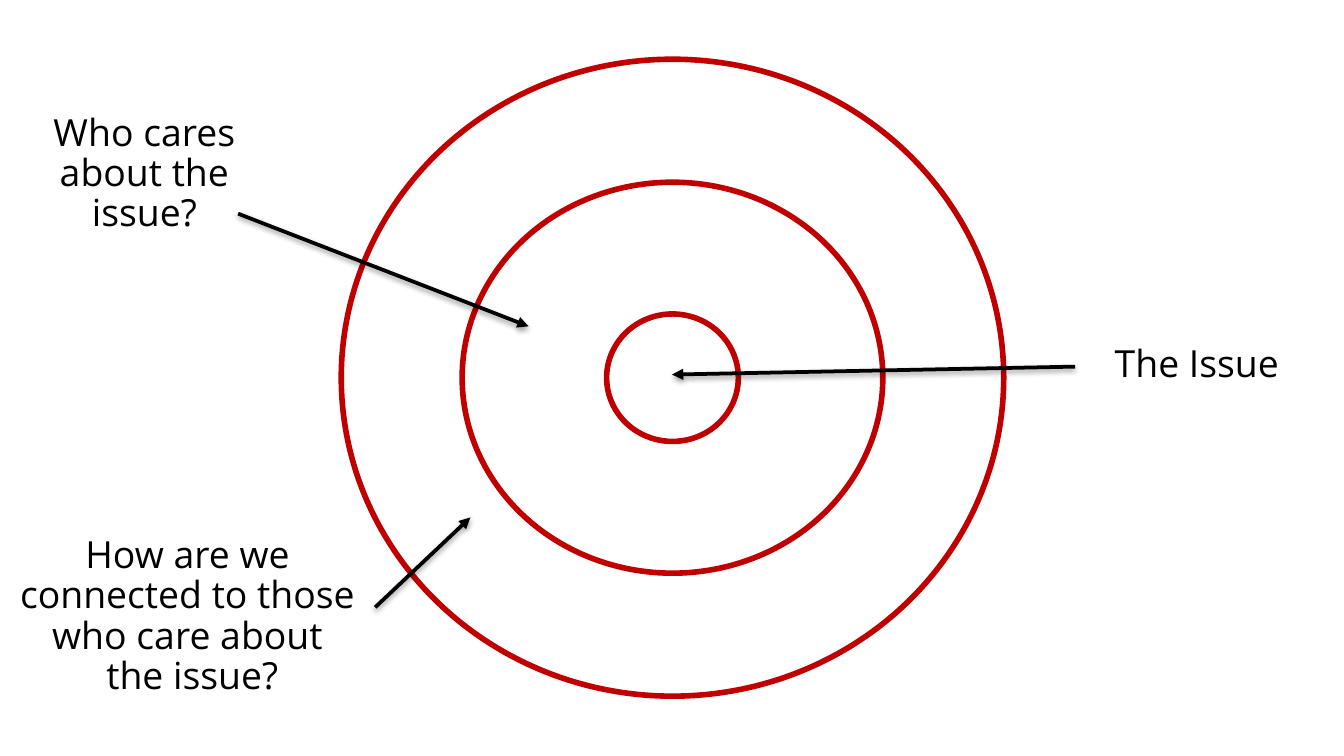
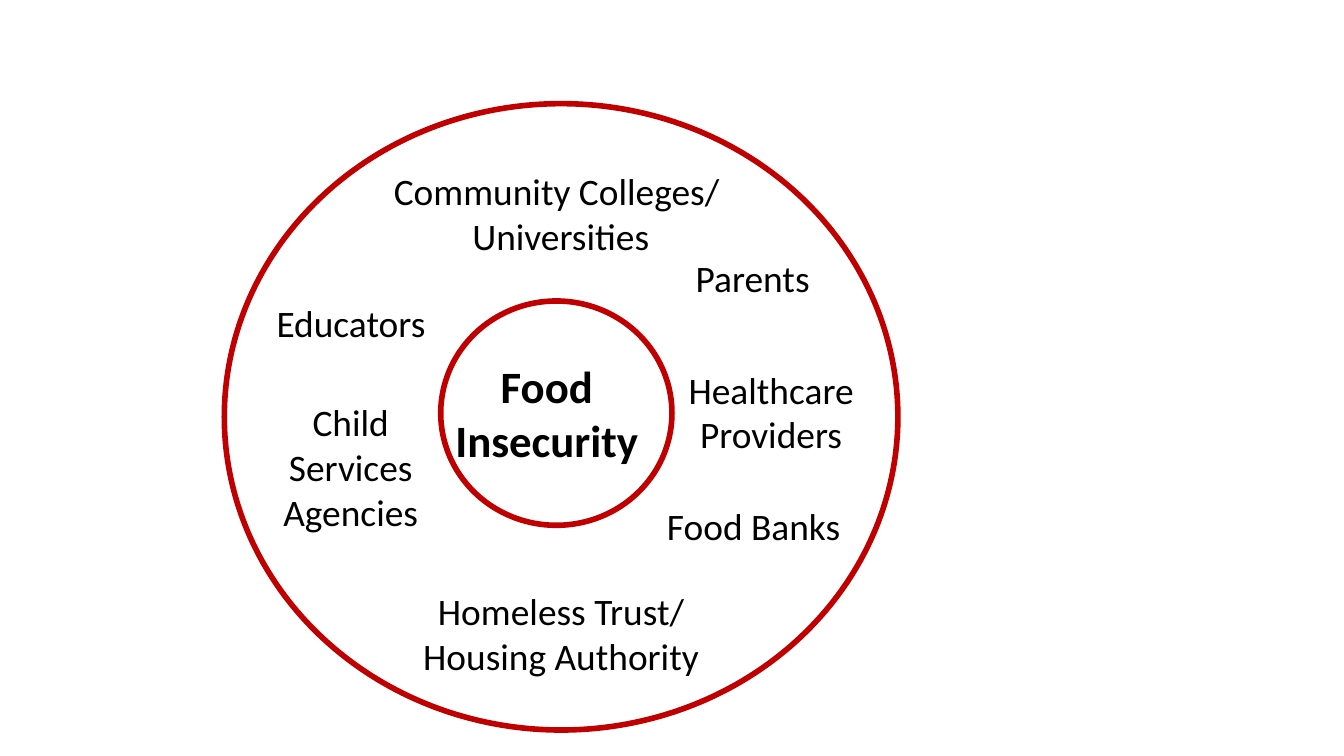
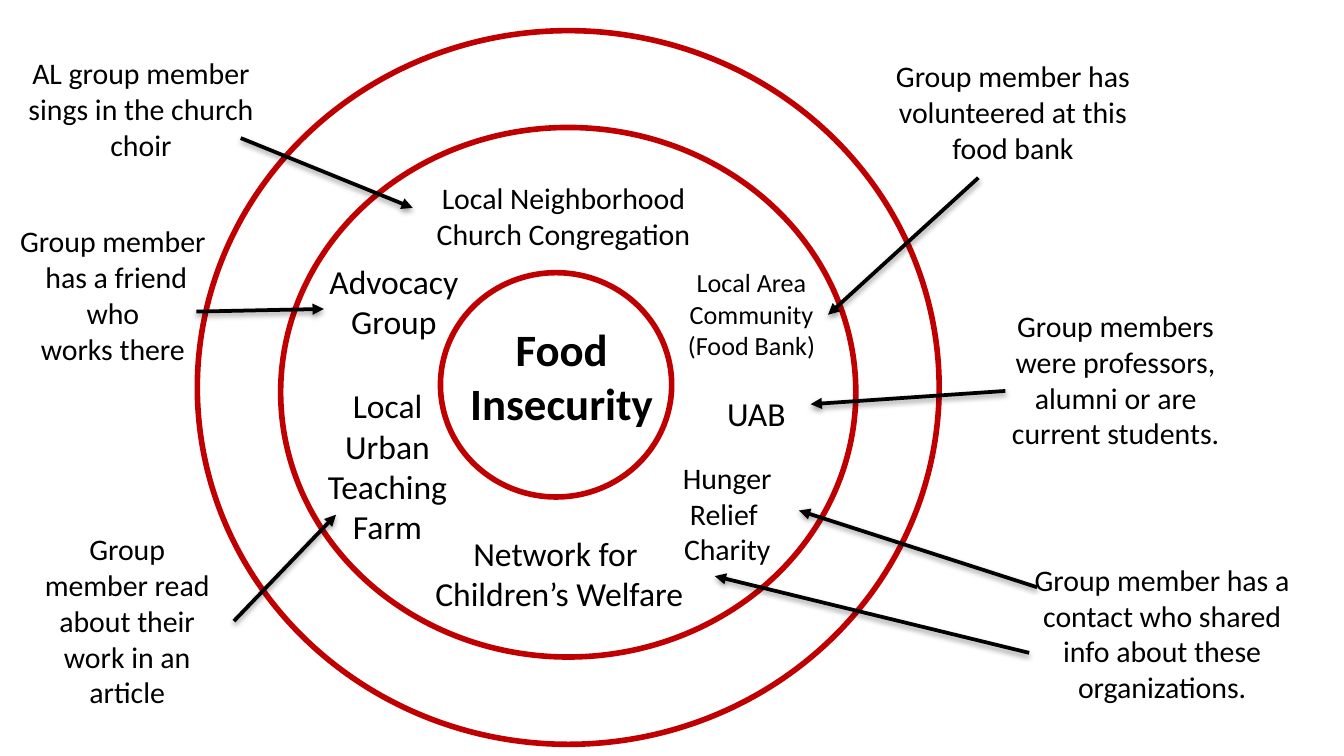
from collections import namedtuple

from lxml import etree
from pptx import Presentation
from pptx.dml.color import RGBColor
from pptx.enum import shapes, text
from pptx.oxml import ns
from pptx.util import Cm, Pt

RED = RGBColor(0xC0, 0x00, 0x00)
BLACK = RGBColor(0x00, 0x00, 0x00)
BODY_FONT = "Calibri"
QUESTION_FONT = "Open Sans"

Box = namedtuple("Box", "left top width height")
SHADOW = (
    f'<a:effectLst {ns.nsdecls("a")}>'
    '<a:outerShdw blurRad="39370" dist="20320" dir="5400000" rotWithShape="0">'
    '<a:srgbClr val="000000"><a:alpha val="38000"/></a:srgbClr>'
    '</a:outerShdw></a:effectLst>'
)
INNER_RING = (4.37, 4.24)
HUB_SIZE = (4.01, 2.31)
HUB_TEXT = "Food\vInsecurity"


def add_words(slide, box, words, size=20, font=BODY_FONT, bold=False,
              wrap=True, grow=True, spacing=None):
    frame = slide.shapes.add_textbox(*map(Cm, box)).text_frame
    frame.word_wrap = wrap
    frame.auto_size = (text.MSO_AUTO_SIZE.SHAPE_TO_FIT_TEXT if grow
                       else text.MSO_AUTO_SIZE.NONE)
    for index, line in enumerate(words.split("\n")):
        paragraph = frame.add_paragraph() if index else frame.paragraphs[0]
        paragraph.text = line
        paragraph.alignment = text.PP_ALIGN.CENTER
        if spacing:
            paragraph.line_spacing = spacing
        for run in paragraph.runs:
            run.font.name = font
            run.font.size = Pt(size)
            run.font.bold = bold
            run.font.color.rgb = BLACK


def add_arrow(slide, start_x, start_y, run_x, run_y):
    arrow = slide.shapes.add_connector(
        shapes.MSO_CONNECTOR.STRAIGHT, Cm(start_x), Cm(start_y),
        Cm(start_x + run_x), Cm(start_y + run_y))
    arrow.line.color.rgb = BLACK
    arrow.line.width = Pt(2)
    etree.SubElement(arrow.line._get_or_add_ln(), ns.qn("a:tailEnd"), type="triangle")
    arrow._element.spPr.append(etree.fromstring(SHADOW))


def add_target(slide, box, inner_rings):
    center_x = box.left + box.width / 2
    center_y = box.top + box.height / 2
    for shift_x, shift_y, width, height in [*inner_rings, (0, 0, box.width, box.height)]:
        ring = slide.shapes.add_shape(
            shapes.MSO_SHAPE.OVAL,
            Cm(center_x + shift_x - width / 2), Cm(center_y + shift_y - height / 2),
            Cm(width), Cm(height))
        ring.fill.background()
        ring.line.color.rgb = RED
        ring.line.width = Pt(3)
        ring.shadow.inherit = False


def add_groups(slide, target, groups):
    for (left, top, width, height), words, style in groups:
        place = Box(target.left + left, target.top + top, width, height)
        add_words(slide, place, words, **style)


def add_callout(slide, box, words, arrows, **style):
    add_words(slide, box, words, **style)
    for start_x, start_y, run_x, run_y in arrows:
        add_arrow(slide, box.left + start_x, box.top + start_y, run_x, run_y)


def issue_slide(slide):
    add_target(slide, Box(6.45, 1.12, 12.52, 12.04),
               [(0, 0, 2.49, 2.41), (0, 0, 7.95, 7.39)])
    questions = [
        (Box(-0.05, 2.03, 5.56, 1.37), "Who cares about the issue?",
         (4.55, 2.01, 5.49, 2.13)),
        (Box(0, 10.01, 7.09, 0.84),
         "How are we connected to those who care about\v the issue?",
         (7.09, 1.47, 1.8, -1.7)),
        (Box(19.84, 6.4, 5.56, 1.37), "The Issue", (0.48, 0.53, -7.62, 0.15)),
    ]
    for box, words, arrow in questions:
        add_callout(slide, box, words, [arrow], font=QUESTION_FONT,
                    grow=False, spacing=0.9)


def stakeholder_slide(slide):
    target = Box(4.24, 1.96, 12.73, 11.84)
    add_target(slide, target, [(-0.09, -0.07, *INNER_RING)])
    unwrapped = dict(wrap=False)
    add_groups(slide, target, [
        ((4.09, 4.7, *HUB_SIZE), HUB_TEXT, dict(size=24, bold=True, wrap=False)),
        ((8.64, 2.74, 2.69, 1.12), "Parents", unwrapped),
        ((0.64, 3.58, 3.51, 1.12), "Educators", {}),
        ((3.48, 9.04, 5.77, 1.96), "Homeless Trust/\nHousing Authority", unwrapped),
        ((8.1, 7.42, 3.81, 1.12), "Food Banks", unwrapped),
        ((2.92, 1.09, 6.88, 1.96), "Community Colleges/ \nUniversities", unwrapped),
        ((8.43, 4.85, 3.81, 1.96), "Healthcare Providers", {}),
        ((0.36, 5.46, 4.06, 2.82), "Child Services Agencies", {}),
    ])


def connection_slide(slide):
    target = Box(3.73, 0.58, 14.02, 13.49)
    add_target(slide, target, [(-0.23, -0.05, *INNER_RING), (0, 0.09, 10.87, 10.01)])
    add_groups(slide, target, [
        ((4.88, 5.38, *HUB_SIZE), HUB_TEXT, dict(size=24, bold=True, wrap=False)),
        ((1.96, 4.22, 3.51, 1.8), "Advocacy Group", dict(size=18)),
        ((3.94, 9.37, 5.66, 1.8), "Network for\v Children’s Welfare",
         dict(size=18, wrap=False)),
        ((8.26, 7.98, 3.51, 1.63), "Hunger Relief \nCharity", dict(size=16, wrap=False)),
        ((3.68, 2.69, 6.48, 1.63), "Local Neighborhood Church Congregation",
         dict(size=16)),
        ((8.86, 4.34, 3.23, 2.06), "Local Area Community\n(Food Bank)", dict(size=14)),
        ((9.75, 6.73, 1.63, 1.02), "UAB", dict(size=18, wrap=False)),
        ((1.88, 6.58, 3.43, 3.33), "Local Urban Teaching Farm", dict(size=18)),
    ])
    connections = [
        (Box(0.41, 9.91, 3.99, 3.68), "Group member read about their work in an article",
         [(4.01, 1.83, 1.93, -2.01)]),
        (Box(16.48, 0.97, 5.33, 2.31),
         "Group member has\vvolunteered at this food bank",
         [(2.01, 2.39, -2.84, 2.59)]),
        (Box(0, 0.91, 5.33, 2.31), "AL group member sings in the church choir",
         [(4.55, 1.7, 3.25, 1.32)]),
        (Box(-0.53, 4.09, 5.33, 3), "Group member\n has a friend\n who \nworks there",
         [(4.24, 1.8, 2.41, -0.05)]),
        (Box(19.3, 10.49, 5.33, 3),
         "Group member has a contact who shared info about these organizations.",
         [(0.15, 1.85, -5.94, -1.45), (0.3, 0.61, -4.5, -1.45)]),
        (Box(18.42, 5.69, 5.33, 3),
         "Group members were professors, alumni or are current students.",
         [(0.58, 1.7, -3.68, 0.25)]),
    ]
    for box, words, arrows in connections:
        add_callout(slide, box, words, arrows, size=16)


def main():
    deck = Presentation()
    deck.slide_width = Cm(25.4)
    deck.slide_height = Cm(14.29)
    for build in (issue_slide, stakeholder_slide, connection_slide):
        build(deck.slides.add_slide(deck.slide_layouts[6]))
    deck.save("out.pptx")


if __name__ == "__main__":
    main()
